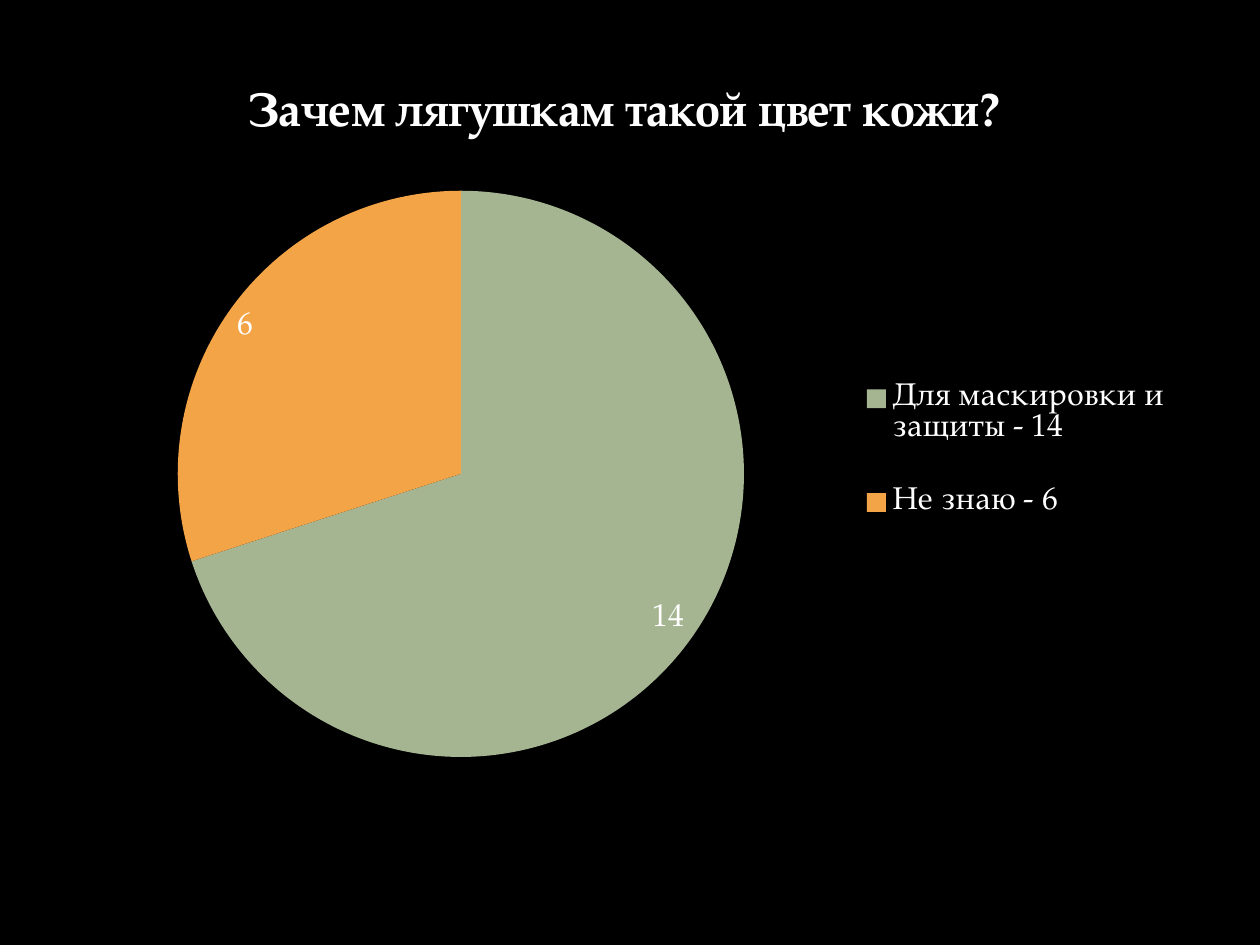
import pptx
import pptx.chart.data
import pptx.dml.color
import pptx.enum.chart
import pptx.oxml
import pptx.oxml.ns
import pptx.util
from dataclasses import dataclass

Cm = pptx.util.Cm
Pt = pptx.util.Pt
Color = pptx.dml.color.RGBColor.from_string
qn = pptx.oxml.ns.qn


@dataclass(frozen=True)
class Theme:
    font: str = "TeX Gyre Pagella"
    background: str = "000000"
    text: str = "FFFFFF"
    slices: tuple = ("A5B592", "F3A447")
    title_size: int = 27
    body_size: int = 18


theme = Theme()


def style_font(font, size, bold=False):
    font.name = theme.font
    font.size = Pt(size)
    font.bold = bold
    font.color.rgb = Color(theme.text)


def make_layout(x, y, width, height, target=""):
    layout = pptx.oxml.parse_xml(
        f'<c:layout {pptx.oxml.ns.nsdecls("c")}><c:manualLayout>{target}'
        '<c:xMode val="edge"/><c:yMode val="edge"/>'
        f'<c:x val="{x}"/><c:y val="{y}"/><c:w val="{width}"/><c:h val="{height}"/>'
        '</c:manualLayout></c:layout>'
    )
    return layout


presentation = pptx.Presentation()
presentation.slide_width = Cm(25.4)
presentation.slide_height = Cm(19.05)
slide = presentation.slides.add_slide(presentation.slide_layouts[6])
slide.background.fill.solid()
slide.background.fill.fore_color.rgb = Color(theme.background)

question = "Зачем лягушкам такой цвет кожи? "
answers = pptx.chart.data.CategoryChartData()
answers.categories = ["Для маскировки и защиты - 14", "Не знаю - 6 "]
answers.add_series(question, (14, 6))
chart = slide.shapes.add_chart(
    pptx.enum.chart.XL_CHART_TYPE.PIE, Cm(1.3), Cm(1.12), Cm(22.83), Cm(15.62), answers
).chart
style_font(chart.font, theme.body_size)

chart.has_title = True
run = chart.chart_title.text_frame.paragraphs[0].add_run()
run.text = question
style_font(run.font, theme.title_size, bold=True)
chart.chart_title.include_in_layout = False

pie = chart.plots[0]
pie.vary_by_categories = True
for index, color in enumerate(theme.slices):
    point = pie.series[0].points[index]
    point.format.fill.solid()
    point.format.fill.fore_color.rgb = Color(color)
    point.format.line.fill.background()

pie.has_data_labels = True
pie.data_labels.show_value = True
pie.data_labels.show_percentage = False
pie.data_labels.position = pptx.enum.chart.XL_LABEL_POSITION.INSIDE_END
style_font(pie.data_labels.font, theme.body_size)

chart.has_legend = True
legend = chart.legend
legend.position = pptx.enum.chart.XL_LEGEND_POSITION.RIGHT
legend.include_in_layout = False
style_font(legend.font, theme.body_size)
legend_element = chart.element.find(".//" + qn("c:legend"))
legend_element.find(qn("c:legendPos")).addnext(make_layout(0.7, 0.37, 0.28, 0.28))

plot_area = chart.element.find(".//" + qn("c:plotArea"))
for layout in plot_area.findall(qn("c:layout")):
    plot_area.remove(layout)
plot_area.insert(0, make_layout(0.1, 0.17, 0.5, 0.74, '<c:layoutTarget val="inner"/>'))

presentation.save("out.pptx")
